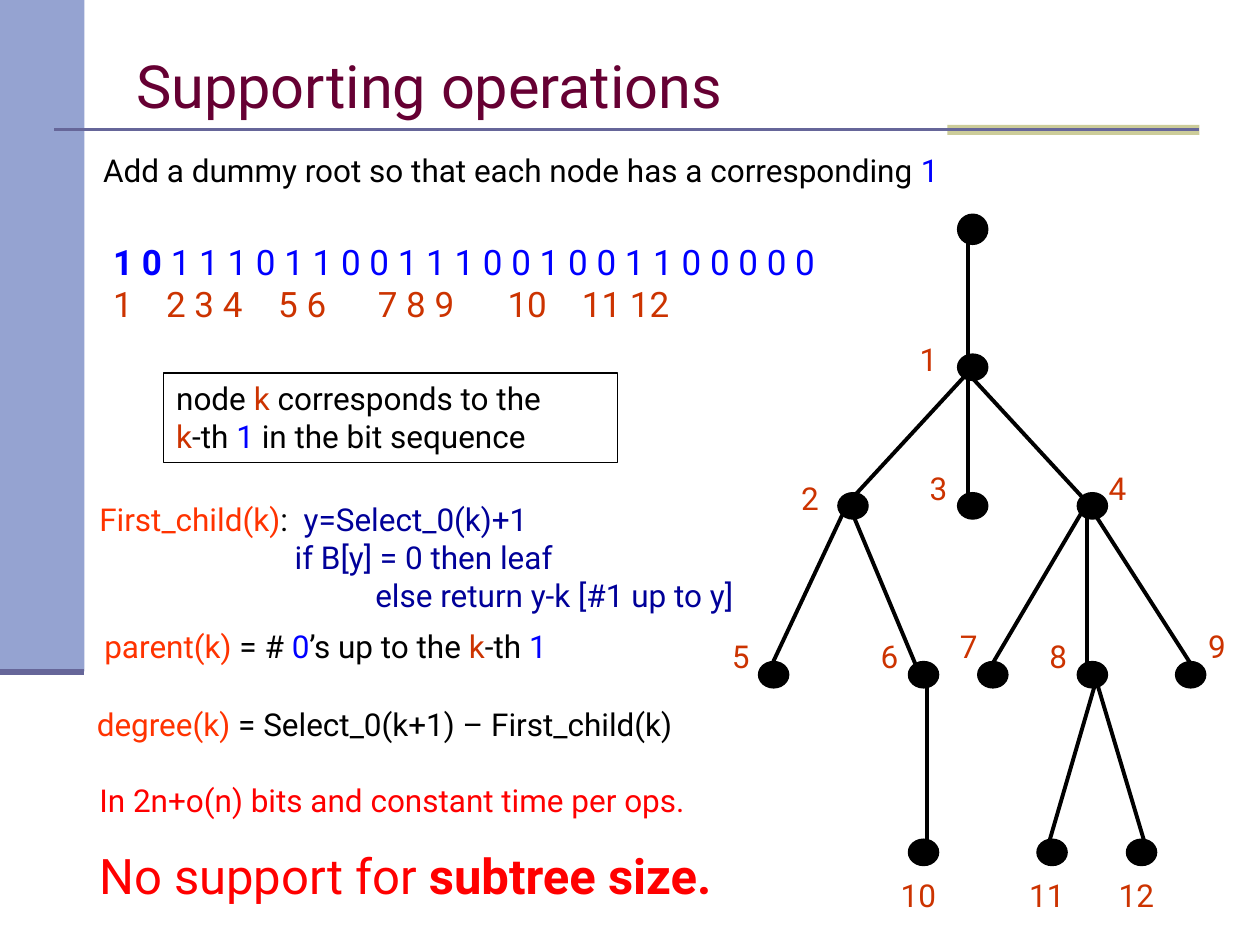
import pptx
import pptx.util
import pptx.dml.color
import pptx.enum.shapes
import pptx.enum.text
import lxml.etree
from pptx.util import Inches

FONT = "Roboto"
BLACK, BLUE, NAVY = "000000", "0000FF", "000099"
RUST, ORANGE, RED = "CC3300", "FF3300", "FF0000"
KIND = pptx.enum.shapes.MSO_SHAPE

deck = pptx.Presentation()
deck.slide_width, deck.slide_height = Inches(10), Inches(7.5)
page = deck.slides.add_slide(deck.slide_layouts[5])


def color(value):
    return pptx.dml.color.RGBColor.from_string(value)


def add_text(left, top, width, height, paragraphs, size=18, box=None, anchor="TOP", indents=(), tabs=()):
    """Fill a box with paragraphs, each a list of (text, color[, bold[, size]]) spans."""
    if box is None:
        box = page.shapes.add_textbox(0, 0, 0, 0)
    box.left, box.top, box.width, box.height = map(Inches, (left, top, width, height))
    frame = box.text_frame
    frame.word_wrap = True
    frame.auto_size = pptx.enum.text.MSO_AUTO_SIZE.NONE
    frame.vertical_anchor = pptx.enum.text.MSO_ANCHOR[anchor]
    for index, spans in enumerate(paragraphs):
        para = frame.add_paragraph() if index else frame.paragraphs[0]
        para.alignment = pptx.enum.text.PP_ALIGN.LEFT
        properties = para._p.get_or_add_pPr()
        if indents:
            properties.set("marL", str(Inches(indents[index])))
        if tabs:
            stops = lxml.etree.SubElement(properties, pptx.oxml.ns.qn("a:tabLst"))
            for stop in tabs:
                lxml.etree.SubElement(stops, pptx.oxml.ns.qn("a:tab"), pos=str(Inches(stop)), algn="l")
        for text, ink, *style in spans:
            span = para.add_run()
            span.text = text
            span.font.name = FONT
            span.font.color.rgb = color(ink)
            span.font.bold = bool(style and style[0])
            span.font.size = pptx.util.Pt(style[1] if len(style) > 1 else size)
    return frame


def add_figure(kind, left, top, width, height, fill=None, line=None, weight=0.75):
    """Add a preset shape, or a connector from (left, top) to (width, height) if kind is None."""
    ends = map(Inches, (left, top, width, height))
    if kind is None:
        figure = page.shapes.add_connector(pptx.enum.shapes.MSO_CONNECTOR.STRAIGHT, *ends)
        lxml.etree.SubElement(figure._element.spPr, pptx.oxml.ns.qn("a:effectLst"))
    else:
        figure = page.shapes.add_shape(kind, *ends)
        figure.shadow.inherit = False
        if fill:
            figure.fill.solid()
            figure.fill.fore_color.rgb = color(fill)
        else:
            figure.fill.background()
    if line:
        figure.line.color.rgb = color(line)
        figure.line.width = pptx.util.Pt(weight)
    else:
        figure.line.fill.background()
    return figure


# Side band and title rule
add_figure(KIND.RECTANGLE, 0, 0, 0.67, 5.33, fill="95A3D1")
add_figure(KIND.RECTANGLE, 7.52, 0.99, 2, 0.08, fill="CCCC99")
add_figure(None, 0.43, 1.03, 9.52, 1.03, line="666699", weight=1.5)
add_figure(None, 0, 5.33, 0.67, 5.33, line="666699", weight=3.5)

add_text(0.98, 0.28, 8.5, 0.79, [[("Supporting operations", "660033")]],
         size=34, box=page.shapes.title, anchor="MIDDLE")
add_text(0.72, 1.15, 8.22, 0.4,
         [[("Add a dummy root so that each node has a corresponding ", BLACK), ("1", BLUE)]])

# Bit sequence with node numbers below
add_text(0.8, 1.86, 6.17, 0.77, [
    [("1 0", BLUE, True), (" 1 1 1 0 1 1 0 0 1 1 1 0 0 1 0 0 1 1 0 0 0 0 0", BLUE)],
    [("1\t2 3 4\t5 6\t7 8 9\t10\t11 12", RUST)],
], size=20, tabs=(0.42, 1.31, 2.1, 3.13, 3.72))

# Tree: node -> (left, top, label left, label top)
nodes = {
    "root": (7.6, 1.7, None, None),
    "1": (7.6, 2.81, 7.2, 2.65),
    "2": (6.65, 3.91, 6.26, 3.75),
    "3": (7.6, 3.91, 7.28, 3.67),
    "4": (8.55, 3.91, 8.7, 3.67),
    "5": (6.02, 5.25, 5.71, 5.01),
    "6": (7.21, 5.25, 6.89, 5.01),
    "7": (7.76, 5.25, 7.52, 4.93),
    "8": (8.55, 5.25, 8.23, 5.01),
    "9": (9.33, 5.25, 9.49, 4.93),
    "10": (7.21, 6.66, 7.05, 6.9),
    "11": (8.23, 6.66, 8.07, 6.9),
    "12": (8.94, 6.66, 8.78, 6.9),
}
# Parent, child, then the offsets of the two ends inside their nodes
edges = [
    ("root", "1", 0.08, 0.16, 0.08),
    ("1", "2", 0.08, 0.15, 0.08),
    ("1", "3", 0.08, 0.15, 0.08),
    ("1", "4", 0.08, 0.15, 0.08),
    ("2", "5", 0.08, 0.08, 0.08),
    ("2", "6", 0.08, 0.08, 0.08),
    ("4", "7", 0.08, 0.08, 0.08),
    ("4", "8", 0.08, 0.08, 0.08),
    ("4", "9", 0.08, 0.08, 0.16),
    ("6", "10", 0.15, 0.08, 0.15),
    ("8", "11", 0.15, 0.15, 0.08),
    ("8", "12", 0.15, 0.15, 0.16),
]
for parent, child, start_x, start_y, end_x in edges:
    add_figure(None, nodes[parent][0] + start_x, nodes[parent][1] + start_y,
               nodes[child][0] + end_x, nodes[child][1] + 0.08, line=BLACK, weight=2.25)
for name, (left, top, label_left, label_top) in nodes.items():
    add_figure(KIND.OVAL, left, top, 0.24, 0.24 if name == "root" else 0.21, fill=BLACK, line=BLACK)
    if label_left is not None:
        add_text(label_left, label_top, 0.2 + 0.16 * len(name), 0.4, [[(name, RUST)]])

# Operations
add_text(1.3, 2.96, 3.6, 0.71, [
    [("node ", BLACK), ("k", RUST), (" corresponds to the", BLACK)],
    [("k", RUST), ("-th ", BLACK), ("1", BLUE), (" in the bit sequence", BLACK)],
], box=add_figure(KIND.RECTANGLE, 1.3, 2.96, 3.6, 0.71, line=BLACK))
add_text(0.69, 3.92, 5.53, 1.01, [
    [("First_child(k)", ORANGE), (":  ", BLACK), ("y=Select_0(k)+1", NAVY)],
    [("if B[y] = 0 then leaf", NAVY)],
    [("else return y-k [#1 up to y]", NAVY)],
], indents=(0, 1.55, 2.19))
add_text(0.73, 4.93, 3.96, 0.4, [[
    ("parent(k)", ORANGE), (" = # ", BLACK), ("0", BLUE), ("’s up to the ", BLACK),
    ("k", RUST), ("-th ", BLACK), ("1", BLUE),
]])
add_text(0.67, 5.55, 4.96, 0.4,
         [[("degree(k)", ORANGE), (" = Select_0(k+1) – First_child(k)", BLACK)]])

summary = add_text(0.69, 6.18, 5.74, 1.07, [
    [("In 2n+o(n) bits and constant time per ops.", RED)],
    [("No support for ", RED, False, 28), ("subtree size.", RED, True, 28)],
])
for para in summary.paragraphs:
    para.line_spacing = 0.9
summary.paragraphs[1].space_before = pptx.util.Pt(19)

deck.save("out.pptx")
